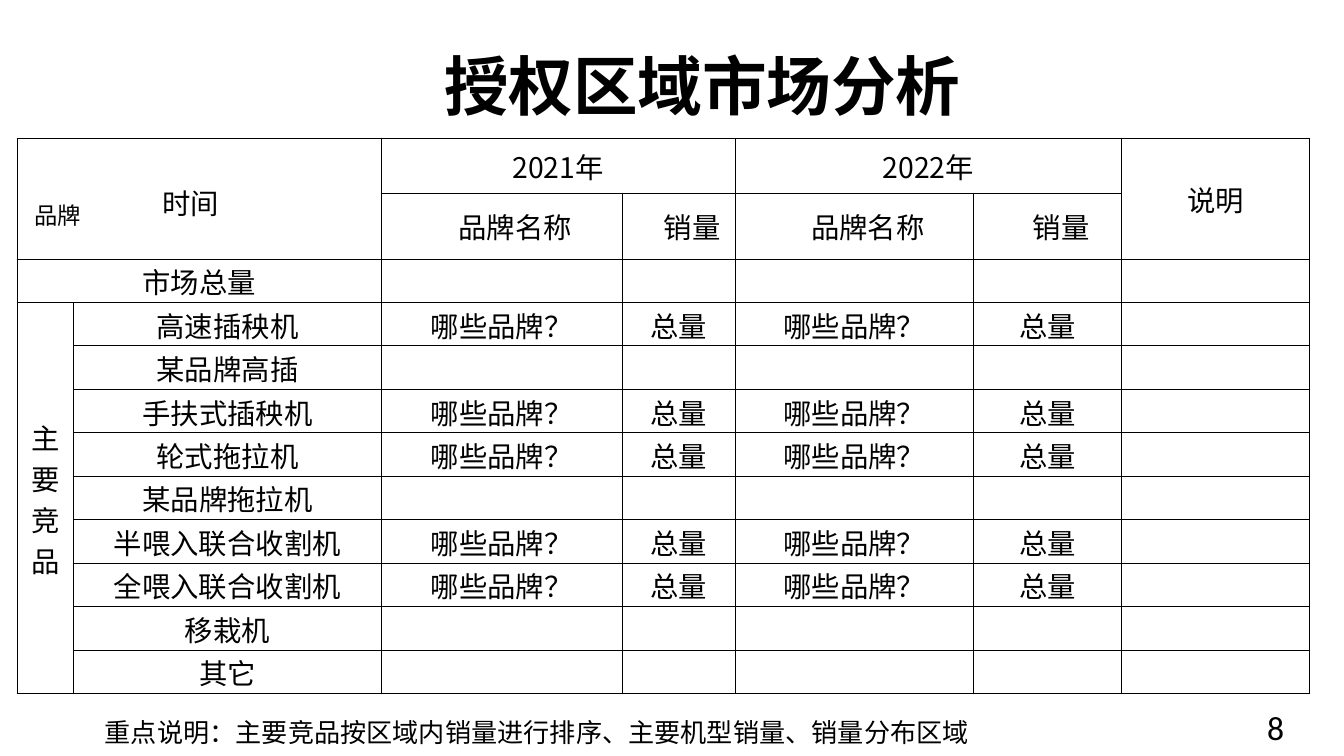
"""Build the regional market analysis slide with its sales table."""
from dataclasses import dataclass

from lxml import etree
from pptx import Presentation
from pptx.dml.color import RGBColor
from pptx.enum.text import MSO_ANCHOR, MSO_AUTO_SIZE, PP_ALIGN
from pptx.oxml.ns import qn
from pptx.util import Emu, Pt

PX = 3048
LEFT, CENTER = PP_ALIGN.LEFT, PP_ALIGN.CENTER
TOP, MIDDLE = MSO_ANCHOR.TOP, MSO_ANCHOR.MIDDLE
FIT_SHAPE, NO_FIT = MSO_AUTO_SIZE.SHAPE_TO_FIT_TEXT, MSO_AUTO_SIZE.NONE
SANS, LATIN = "Noto Sans CJK SC", "Calibri"
BLACK = "000000"
TABLE_SIZE = 15.2
EM = 63
COLUMNS = [127, 686, 538, 252, 533, 330, 420]
ROWS = [122, 147] + [97] * 10
PRODUCTS = [
    ("高速插秧机", True),
    ("某品牌高插", False),
    ("手扶式插秧机", True),
    ("轮式拖拉机", True),
    ("某品牌拖拉机", False),
    ("半喂入联合收割机", True),
    ("全喂入联合收割机", True),
    ("移栽机", False),
    ("其它", False),
]


@dataclass(frozen=True)
class Entry:
    """Text of one table cell with its place, span and left indent."""
    row: int
    column: int
    text: str
    rows: int = 1
    columns: int = 1
    font: str = SANS
    indent: int = 3


@dataclass(frozen=True)
class Label:
    """A single-line text with its box, insets and style."""
    text: str
    left: int
    top: int
    width: int
    height: int
    inset_x: int
    inset_y: int
    size: float
    font: str = SANS
    bold: bool = False
    align: PP_ALIGN = LEFT
    wrap: bool = True


TITLE = Label("授权区域市场分析", 633, 84, 1869, 243, 36, 18, 34.6,
              bold=True, align=CENTER)
NOTE = Label("重点说明：主要竞品按区域内销量进行排序、主要机型销量、销量分布区域",
             201, 1581, 2013, 105, 33, 18, 14, wrap=False)
PAGE_NUMBER = Label("8", 2799, 1563, 201, 90, 30, 15, 18, font=LATIN)


def px(value: int) -> Emu:
    """Convert pixels to EMU."""
    return Emu(value * PX)


def color(value: str) -> RGBColor:
    """Convert a hex string to a colour."""
    return RGBColor.from_string(value)


def style_paragraph(paragraph, size: float, font: str, align: PP_ALIGN, bold: bool = False) -> None:
    """Set alignment and Latin and East Asian fonts of a paragraph."""
    paragraph.alignment = align
    paragraph.font.size = Pt(size)
    paragraph.font.bold = bold
    paragraph.font.color.rgb = color(BLACK)
    paragraph.font.name = font
    properties = paragraph._p.pPr.find(qn("a:defRPr"))
    etree.SubElement(properties, qn("a:ea"), typeface=SANS)


def fill_label(shape, label: Label) -> None:
    """Place a text shape and write its label."""
    shape.left, shape.top = px(label.left), px(label.top)
    shape.width, shape.height = px(label.width), px(label.height)
    frame = shape.text_frame
    frame.margin_left = frame.margin_right = px(label.inset_x)
    frame.margin_top = frame.margin_bottom = px(label.inset_y)
    frame.vertical_anchor = TOP
    frame.word_wrap = label.wrap
    frame.auto_size = NO_FIT if label.wrap else FIT_SHAPE
    frame.text = label.text
    style_paragraph(frame.paragraphs[0], label.size, label.font, label.align, label.bold)


def add_label(slide, label: Label) -> None:
    """Add a text box for a label."""
    box = slide.shapes.add_textbox(px(label.left), px(label.top), px(label.width), px(label.height))
    fill_label(box, label)


def format_cell(cell) -> None:
    """Give a cell thin black borders, no fill and tight margins."""
    properties = cell._tc.get_or_add_tcPr()
    for side in ("lnL", "lnR", "lnT", "lnB"):
        line = etree.SubElement(properties, qn(f"a:{side}"), w=str(Pt(0.5)))
        fill = etree.SubElement(line, qn("a:solidFill"))
        etree.SubElement(fill, qn("a:srgbClr"), val=BLACK)
    cell.fill.background()
    cell.vertical_anchor = MIDDLE
    cell.margin_left = cell.margin_right = cell.margin_top = px(3)
    cell.margin_bottom = px(0)


def write_entry(table, entry: Entry) -> None:
    """Merge the span of an entry and write its text."""
    cell = table.cell(entry.row, entry.column)
    if entry.rows > 1 or entry.columns > 1:
        cell.merge(table.cell(entry.row + entry.rows - 1, entry.column + entry.columns - 1))
    cell.margin_left = px(entry.indent)
    cell.text = entry.text
    style_paragraph(cell.text_frame.paragraphs[0], TABLE_SIZE, entry.font, CENTER)


def write_corner(table) -> None:
    """Write the corner header, a lowered brand label beside the time label."""
    cell = table.cell(0, 0)
    cell.merge(table.cell(1, 1))
    cell.margin_left = px(38)
    paragraph = cell.text_frame.paragraphs[0]
    tabs = etree.SubElement(paragraph._p.get_or_add_pPr(), qn("a:tabLst"))
    etree.SubElement(tabs, qn("a:tab"), pos=str(px(286)), algn="l")
    style_paragraph(paragraph, TABLE_SIZE, SANS, LEFT)
    brand = paragraph.add_run()
    brand.text = "品牌"
    brand.font.size = Pt(21.6)
    brand._r.get_or_add_rPr().set("baseline", "-25000")
    paragraph.add_run().text = "\t时间"


def table_entries() -> list[Entry]:
    """List the headings, product rows and their prompts."""
    entries = [
        Entry(0, 6, "说明", rows=2),
        Entry(2, 0, "市场总量", columns=2, font=LATIN),
        Entry(3, 0, "主要竞品", rows=len(PRODUCTS)),
    ]
    for column, year in ((2, "2021年"), (4, "2022年")):
        entries += [
            Entry(0, column, year, columns=2),
            Entry(1, column, "品牌名称", indent=EM),
            Entry(1, column + 1, "销量", indent=EM),
        ]
    for row, (product, has_prompts) in enumerate(PRODUCTS, start=3):
        entries.append(Entry(row, 1, product, font=LATIN))
        if has_prompts:
            prompts = ("哪些品牌？", "总量") * 2
            entries += [Entry(row, column, text) for column, text in enumerate(prompts, start=2)]
    return entries


def add_sales_table(slide) -> None:
    """Add the table of brands and sales by year."""
    frame = slide.shapes.add_table(len(ROWS), len(COLUMNS), px(38), px(309),
                                   px(sum(COLUMNS)), px(sum(ROWS)))
    table = frame.table
    table.first_row = table.horz_banding = False
    for column, width in zip(table.columns, COLUMNS):
        column.width = px(width)
    for row, height in zip(table.rows, ROWS):
        row.height = px(height)
    for cell in table.iter_cells():
        format_cell(cell)
    write_corner(table)
    for entry in table_entries():
        write_entry(table, entry)
    table.cell(3, 0)._tc.get_or_add_tcPr().set("vert", "eaVert")
    for cell in table.iter_cells():
        if not cell.text:
            paragraph = cell.text_frame.paragraphs[0]
            etree.SubElement(paragraph._p, qn("a:endParaRPr"), sz=str(round(TABLE_SIZE * 100)))


def main() -> None:
    """Build and save the presentation."""
    presentation = Presentation()
    presentation.slide_width, presentation.slide_height = px(3000), px(1687)
    slide = presentation.slides.add_slide(presentation.slide_layouts[5])
    fill_label(slide.shapes.title, TITLE)
    add_label(slide, PAGE_NUMBER)
    add_label(slide, NOTE)
    add_sales_table(slide)
    presentation.save("out.pptx")


if __name__ == "__main__":
    main()
